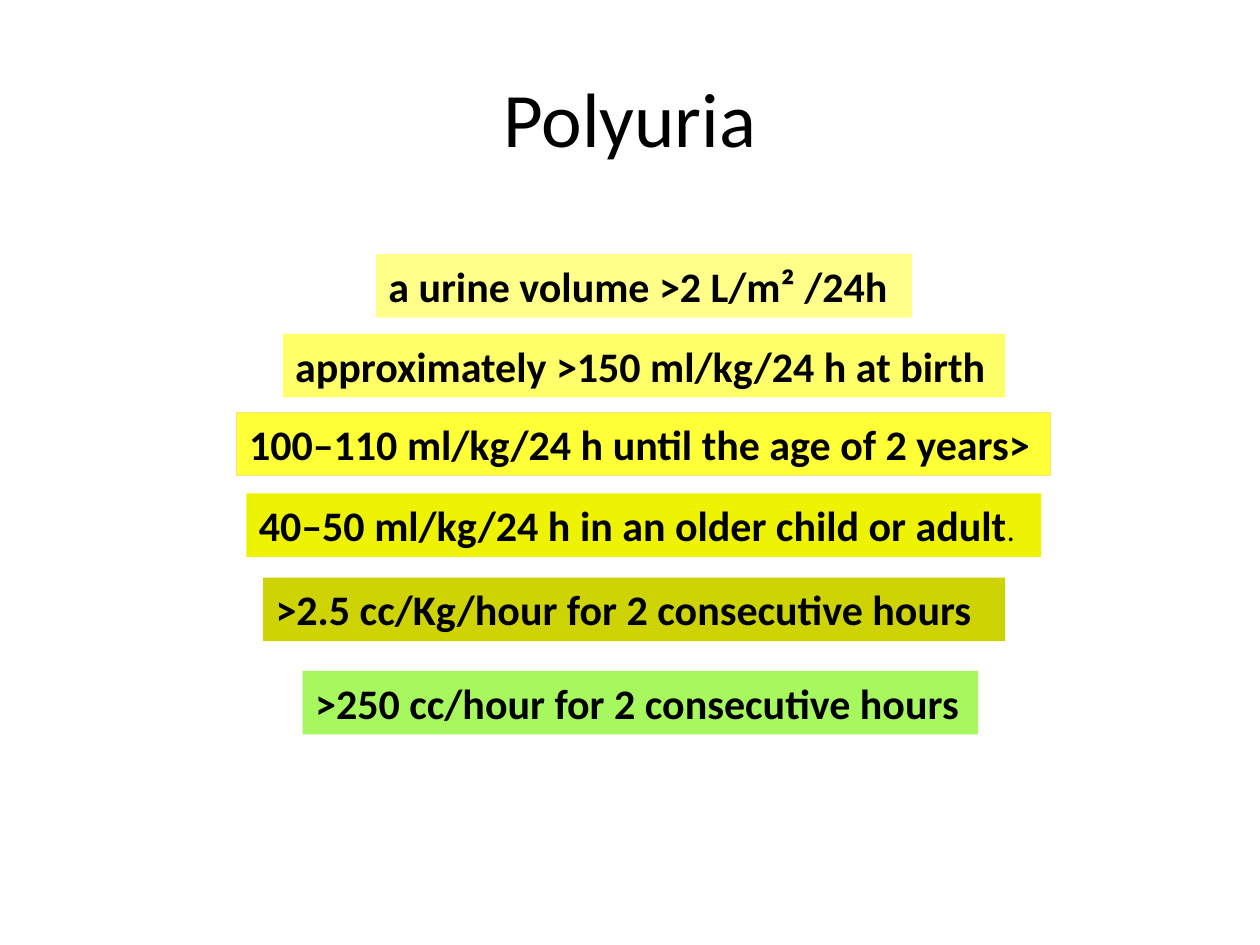
from dataclasses import dataclass

from pptx import Presentation
from pptx.dml.color import RGBColor as Rgb
from pptx.enum.shapes import MSO_SHAPE as Shape
from pptx.enum.text import MSO_ANCHOR as Anchor, PP_ALIGN as Align
from pptx.util import Pt


@dataclass(frozen=True)
class Theme:
    font: str = "Calibri"
    ink: str = "000000"
    edge: str = "FBE181"
    title: int = 44
    body: int = 24
    small: int = 18


THEME = Theme()
BAR_HIGH = 36.3

# text, light ending, left, top, width, fill, edge
BARS = [
    ("a urine volume >2 L/m² /24h", "", 214.8, 145.2, 306.4, "FFFF89", None),
    ("approximately >150 ml/kg/24 h at birth", "", 161.6, 190.8, 412.8, "FFFF69", None),
    ("100–110 ml/kg/24 h until the age of 2 years>", "", 135.2, 235.6, 465.2,
     "FFFF37", THEME.edge),
    ("40–50 ml/kg/24 h in an older child or adult", ".", 140.8, 282, 454.2, "EDF303", None),
    (">2.5 cc/Kg/hour for 2 consecutive hours", "", 150.4, 330, 424, "CED303", None),
    (">250 cc/hour for 2 consecutive hours", "", 173, 383.4, 386, "A7F85E", None),
]


def style(run, size, bold=False):
    font = run.font
    font.name, font.size, font.bold = THEME.font, Pt(size), bold
    font.color.rgb = Rgb.from_string(THEME.ink)


def add_title(slide, text, left, top, width, height):
    title = slide.shapes.title
    title.left, title.top = Pt(left), Pt(top)
    title.width, title.height = Pt(width), Pt(height)
    frame = title.text_frame
    frame.text = text
    frame.vertical_anchor = Anchor.MIDDLE
    para = frame.paragraphs[0]
    para.alignment = Align.CENTER
    style(para.runs[0], THEME.title)


def add_bar(slide, text, tail, left, top, width, fill, edge):
    bar = slide.shapes.add_shape(
        Shape.RECTANGLE, Pt(left), Pt(top), Pt(width), Pt(BAR_HIGH))
    bar.shadow.inherit = False
    bar.fill.solid()
    bar.fill.fore_color.rgb = Rgb.from_string(fill)
    if edge:
        bar.line.color.rgb = Rgb.from_string(edge)
        bar.line.width = Pt(0.75)
    else:
        bar.line.fill.background()
    frame = bar.text_frame
    frame.word_wrap = True
    frame.vertical_anchor = Anchor.TOP
    frame.text = text
    para = frame.paragraphs[0]
    para.alignment = Align.LEFT
    style(para.runs[0], THEME.body, bold=True)
    if tail:
        run = para.add_run()
        run.text = tail
        style(run, THEME.small)


def main():
    deck = Presentation()
    deck.slide_width, deck.slide_height = Pt(720), Pt(540)
    slide = deck.slides.add_slide(deck.slide_layouts[5])
    add_title(slide, "Polyuria", 36, 21.6, 648, 90)
    for bar in BARS:
        add_bar(slide, *bar)
    deck.save("out.pptx")


if __name__ == "__main__":
    main()
